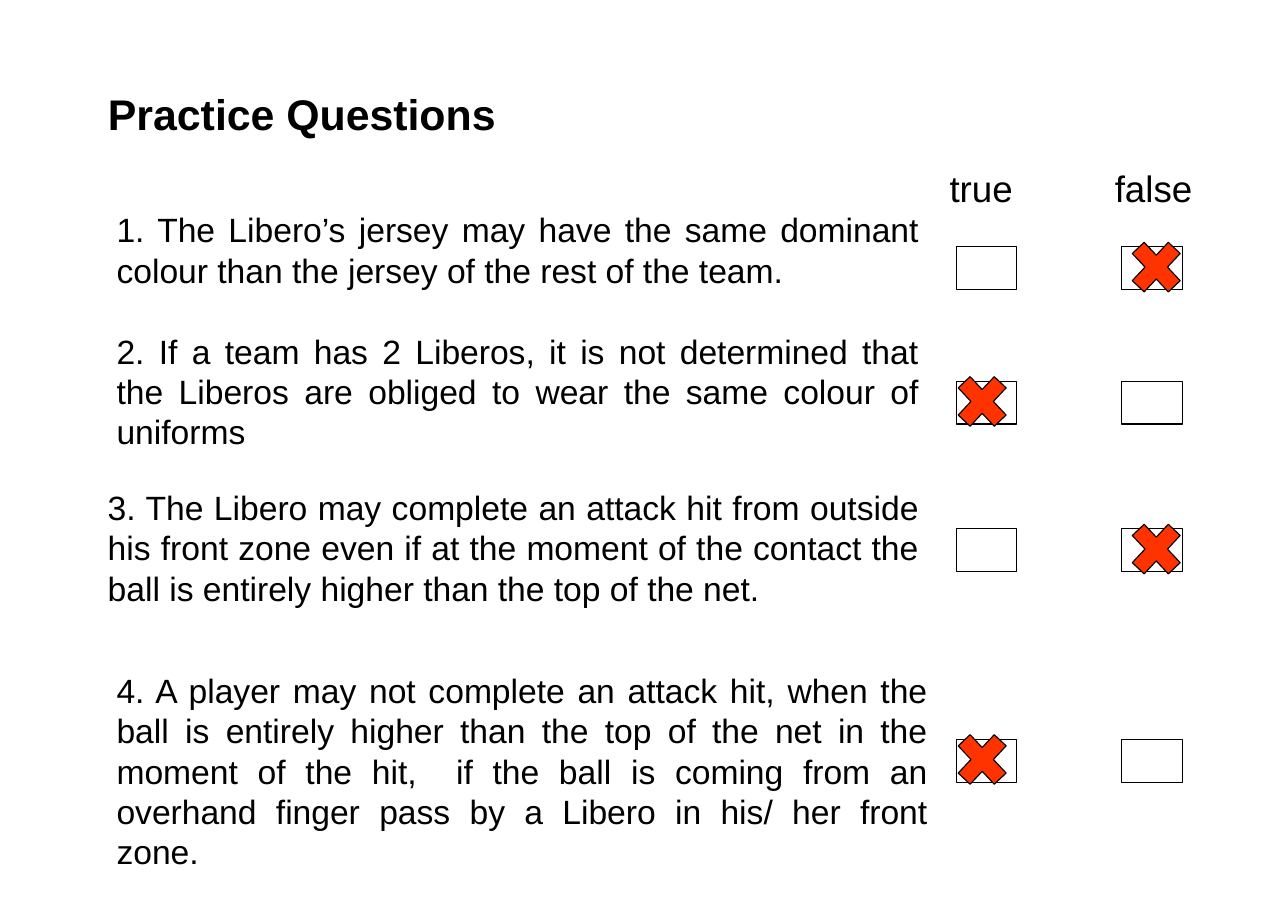
from pptx import Presentation
from pptx.dml.color import RGBColor
from pptx.enum.shapes import MSO_SHAPE as Shape
from pptx.enum.text import MSO_ANCHOR as Anchor, MSO_AUTO_SIZE as AutoSize, PP_ALIGN as Align
from pptx.util import Emu, Pt

PX = 9144
BLACK, RED = "000000", "FF3300"
COLUMNS = {"true": 868, "false": 1018}
CROSS_LEFT = {"true": 860, "false": 1018}
CROSS_RISE = 15
QUESTIONS = [
    ("1. The Libero’s jersey may have the same dominant colour than the jersey "
     "of the rest of the team.", (96, 185, 748, 84), 224, "false"),
    ("2. If a team has 2 Liberos, it is not determined that the Liberos are "
     "obliged to wear the same colour of uniforms", (96, 295, 748, 121), 346, "true"),
    ("3. The Libero may complete an attack hit from outside his front zone even if "
     "at the moment of the contact the ball is entirely higher than the top of the net.",
     (88, 437, 756, 121), 480, "false"),
    ("4. A player may not complete an attack hit, when the ball is entirely higher "
     "than the top of the net in the moment of the hit,  if the ball is coming from "
     "an overhand finger pass by a Libero in his/ her front zone.",
     (96, 603, 756, 195), 671, "true"),
]


def scaled(*lengths):
    """Turn px lengths into EMU."""
    return [Emu(length * PX) for length in lengths]


def colour(code):
    """Turn a hex string into a colour."""
    return RGBColor.from_string(code)


def apply(target, values):
    """Set each attribute of a target from a dict."""
    for name, value in values.items():
        setattr(target, name, value)


def write(box, text, size, align=Align.LEFT, bold=False):
    """Put one formatted paragraph into a box."""
    frame = box.text_frame
    apply(frame, {"word_wrap": True, "auto_size": AutoSize.NONE, "vertical_anchor": Anchor.TOP})
    para = frame.paragraphs[0]
    para.alignment = align
    span = para.add_run()
    span.text = text
    apply(span.font, {"name": "Arial", "size": Pt(size), "bold": bold})
    span.font.color.rgb = colour(BLACK)


def add_title(page, text, place):
    """Move and fill the title placeholder."""
    title = page.shapes.title
    apply(title, dict(zip(("left", "top", "width", "height"), scaled(*place))))
    write(title, text, 28, bold=True)


def add_text(page, text, place, size, align=Align.LEFT):
    """Add a text box."""
    write(page.shapes.add_textbox(*scaled(*place)), text, size, align)


def add_mark(page, kind, place, fill=None):
    """Add an outlined shape, filled when a colour is given."""
    mark = page.shapes.add_shape(kind, *scaled(*place))
    mark.shadow.inherit = False
    if fill:
        mark.fill.solid()
        mark.fill.fore_color.rgb = colour(fill)
    else:
        mark.fill.background()
    mark.line.color.rgb = colour(BLACK)
    mark.line.width = Pt(0.75)


def main():
    """Build the practice question slide."""
    deck = Presentation()
    deck.slide_width, deck.slide_height = scaled(1169, 827)
    page = deck.slides.add_slide(deck.slide_layouts[5])
    add_title(page, "Practice Questions", (88, 75, 756, 57))
    for label, left in COLUMNS.items():
        add_text(page, label, (left - 16, 146, 110, 51), 24)
    for text, place, top, answer in QUESTIONS:
        add_text(page, text, place, 22, Align.JUSTIFY)
        for left in COLUMNS.values():
            add_mark(page, Shape.RECTANGLE, (left, top, 55, 39))
        add_mark(page, Shape.MATH_MULTIPLY, (CROSS_LEFT[answer], top - CROSS_RISE, 63, 67), RED)
    deck.save("out.pptx")


if __name__ == "__main__":
    main()
